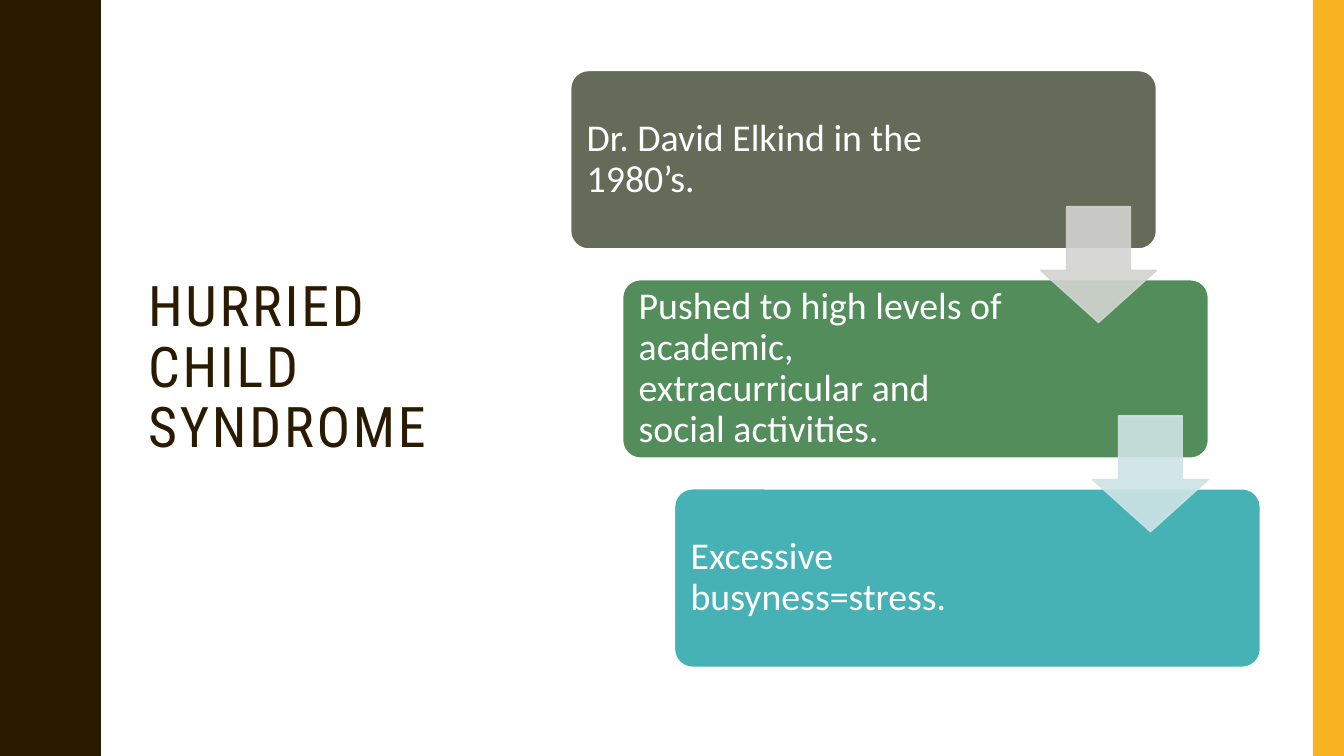
from pptx import Presentation
from pptx.dml.color import RGBColor
from pptx.enum.shapes import MSO_SHAPE
from pptx.enum.text import MSO_ANCHOR
from pptx.oxml.xmlchemy import OxmlElement
from pptx.util import Inches, Pt

WIDE, HIGH = 13.33, 7.5
WAVE = 1.5          # height of one full wave on the left edge
CREST = 0.75        # its turning point
# Left edge of the wave, from trough to crest, as (x, y)
CURVE = [(0.78, 0), (0.78, 0.07), (0.79, 0.14), (0.8, 0.2), (0.81, 0.25),
         (0.83, 0.29), (0.85, 0.33), (0.87, 0.38), (0.89, 0.42), (0.91, 0.46),
         (0.93, 0.5), (0.95, 0.55), (0.96, 0.61), (0.97, 0.68), (0.97, CREST)]

LEFT, TOP = 5.66, 0.7            # first step
STEP_X, STEP_Y = 0.515, 2.075    # shift from one step to the next
STEP_W, STEP_H = 5.81, 1.77
ARROW = 1.15
STEPS = [
    ("Dr. David Elkind in the 1980’s.", "656A59", 3.9),
    ("Pushed to high levels of academic, extracurricular and social activities.",
     "528D5B", 4.04),
    ("Excessive busyness=stress.", "46B2B5", 4.04),
]
ARROWS = ["D3D4D1", "CFE4E5"]


def paint(fill, color, alpha=None):
    """Make a fill solid, with alpha as a percentage."""
    fill.solid()
    fill.fore_color.rgb = RGBColor.from_string(color)
    if alpha is not None:
        node = OxmlElement("a:alpha")
        node.set("val", str(alpha * 1000))
        fill._xPr.find(".//{*}srgbClr").append(node)


def style(shape, color, line=None, alpha=None):
    shape.shadow.inherit = False
    paint(shape.fill, color, alpha)
    if line:
        shape.line.width = Pt(1)
        paint(shape.line.fill, line, alpha)
    else:
        shape.line.fill.background()


def block(slide, kind, box, color, adjust=(), **look):
    shape = slide.shapes.add_shape(kind, *map(Inches, box))
    for i, value in enumerate(adjust):
        shape.adjustments[i] = value
    style(shape, color, **look)


def write(slide, text, box, *, size, font, color, inset=None, track=None):
    frame = slide.shapes.add_textbox(*map(Inches, box)).text_frame
    frame.word_wrap = True
    frame.vertical_anchor = MSO_ANCHOR.MIDDLE
    if inset is not None:
        frame.margin_left = frame.margin_right = Inches(inset)
        frame.margin_top = frame.margin_bottom = Inches(inset)
    para = frame.paragraphs[0]
    para.line_spacing = 0.9
    run = para.add_run()
    run.text = text
    run.font.size = Pt(size)
    run.font.name = font
    run.font.color.rgb = RGBColor.from_string(color)
    if track:
        run._r.get_or_add_rPr().set("spc", str(track * 100))


def wave(slide, color):
    """Draw the left band, whose edge repeats one mirrored curve."""
    cycle = CURVE + [(x, WAVE - y) for x, y in CURVE[-2:0:-1]]
    edge = [(x, y + n * WAVE) for n in range(round(HIGH / WAVE)) for x, y in cycle]
    edge += [(CURVE[0][0], HIGH), (0, HIGH)]
    form = slide.shapes.build_freeform(0, 0, scale=Inches(1))
    form.add_line_segments(edge, close=True)
    style(form.convert_to_shape(), color)


def step(slide, row, text, color, width):
    x, y = LEFT + row * STEP_X, TOP + row * STEP_Y
    block(slide, MSO_SHAPE.ROUNDED_RECTANGLE, (x, y, STEP_W, STEP_H), color,
          adjust=[0.1], line="FFFFFF")
    write(slide, text, (x + 0.05, y + 0.05, width, STEP_H - 0.1),
          size=27, font="Calibri", color="FFFFFF", inset=0.11)


def arrow(slide, row, color):
    x = LEFT + STEP_W - ARROW + row * STEP_X
    y = TOP + 1.35 + row * STEP_Y
    block(slide, MSO_SHAPE.DOWN_ARROW, (x, y, ARROW, ARROW), color,
          adjust=[0.55, 0.45], line=color, alpha=90)


def main():
    deck = Presentation()
    deck.slide_width, deck.slide_height = Inches(WIDE), Inches(HIGH)
    slide = deck.slides.add_slide(deck.slide_layouts[6])
    paint(slide.background.fill, "FFFFFF")
    wave(slide, "2A1A00")
    block(slide, MSO_SHAPE.RECTANGLE, (WIDE - 0.31, 0, 0.31, HIGH), "F8B323")
    write(slide, "HURRIED CHILD SYNDROME", (1.37, TOP, 3.7, 5.92),
          size=40, font="Roboto Condensed", color="2A1A00", track=2)
    for row, item in enumerate(STEPS):
        step(slide, row, *item)
    for row, color in enumerate(ARROWS):
        arrow(slide, row, color)
    deck.save("out.pptx")


if __name__ == "__main__":
    main()
